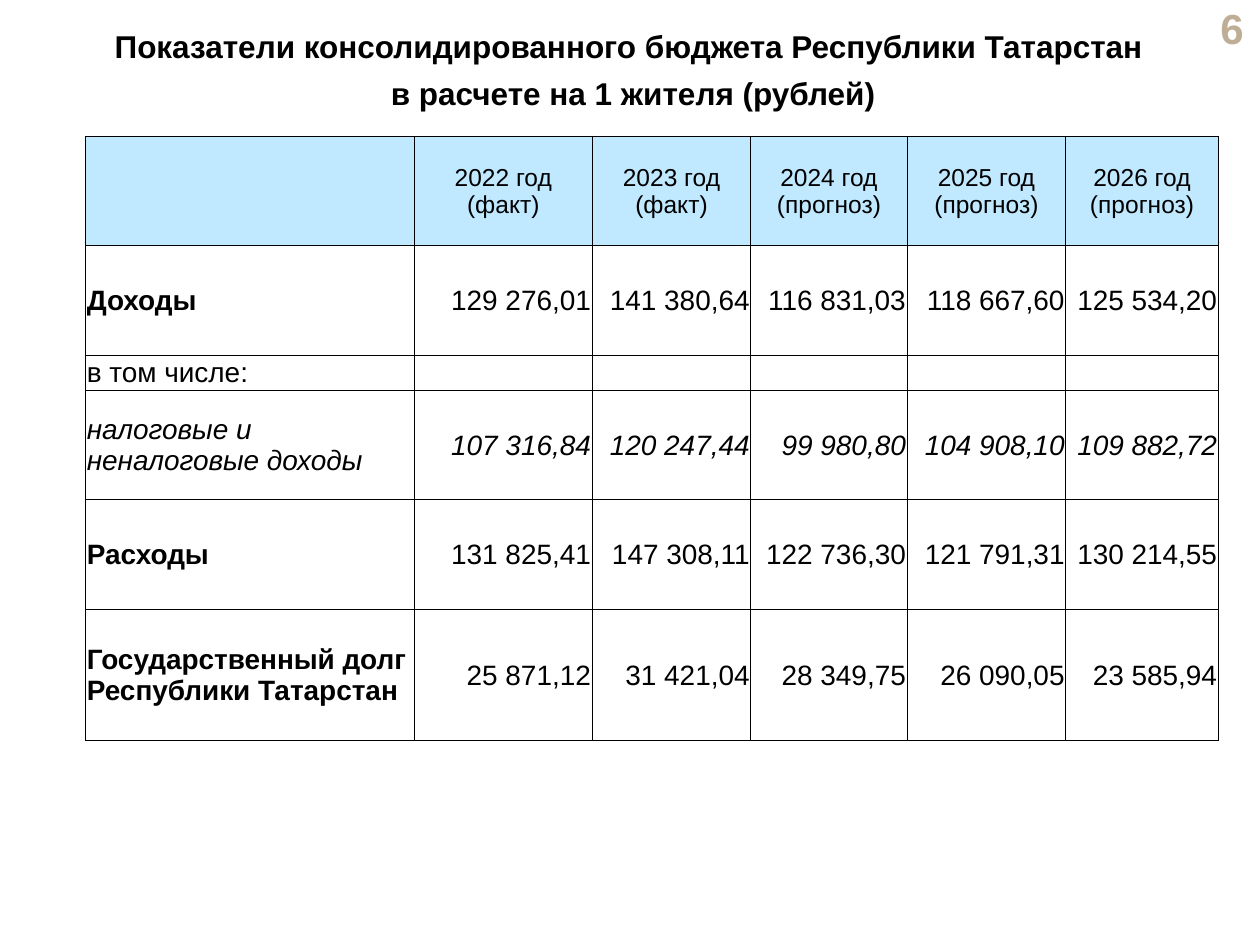
from lxml import etree
from pptx import Presentation
from pptx.dml.color import RGBColor
from pptx.enum import text
from pptx.oxml.ns import qn
from pptx.util import Inches, Pt

COLORS = {"text": "000000", "border": "000000", "header": "C0E9FF",
          "body": "FFFFFF", "page": "BFAE96"}
TITLE = ["Показатели консолидированного бюджета Республики Татарстан ",
         "в расчете на 1 жителя (рублей)"]
HEADER = ["", "2022 год\v(факт)", "2023 год (факт)", "2024 год\v(прогноз)",
          "2025 год\v(прогноз)", "2026 год\v(прогноз)"]
BUDGET = [
    ["Доходы", "129 276,01", "141 380,64", "116 831,03", "118 667,60", "125 534,20"],
    ["в том числе:", "", "", "", "", ""],
    ["налоговые и неналоговые доходы", "107 316,84", "120 247,44", "99 980,80",
     "104 908,10", "109 882,72"],
    ["Расходы", "131 825,41", "147 308,11", "122 736,30", "121 791,31", "130 214,55"],
    ["Государственный долг Республики Татарстан", "25 871,12", "31 421,04",
     "28 349,75", "26 090,05", "23 585,94"],
]
BOLD_ROWS = {1, 4, 5}
ITALIC_ROW = 3
COLUMN_WIDTHS = [2.61, 1.41, 1.26, 1.24, 1.26, 1.21]
ROW_HEIGHTS = [0.87, 0.87, 0.26, 0.87, 0.87, 1.04]


def style_paragraph(paragraph, size, align, color="text", bold=False, italic=False):
    paragraph.alignment = align
    font = paragraph.font
    font.name, font.size, font.bold, font.italic = "Arial", Pt(size), bold, italic
    font.color.rgb = RGBColor.from_string(COLORS[color])


def add_title(slide):
    title = slide.shapes.title
    title.left, title.top = Inches(0.6), Inches(0.2)
    title.width, title.height = Inches(8.85), Inches(0.67)
    frame = title.text_frame
    frame.text = "\n".join(TITLE)
    frame.word_wrap = True
    frame.auto_size = text.MSO_AUTO_SIZE.NONE
    frame.vertical_anchor = text.MSO_ANCHOR.TOP
    for index, line in enumerate(frame.paragraphs):
        line.line_spacing = 0.9
        line.space_before = Pt(7.5 if index else 0)
        style_paragraph(line, 18, text.PP_ALIGN.CENTER, bold=True)


def add_page_number(slide, number):
    box = slide.shapes.add_textbox(Inches(9.11), Inches(0.05), Inches(0.86), Inches(0.34))
    frame = box.text_frame
    frame.text = number
    frame.word_wrap = True
    frame.vertical_anchor = text.MSO_ANCHOR.MIDDLE
    style_paragraph(frame.paragraphs[0], 24, text.PP_ALIGN.RIGHT, "page", bold=True)


def add_borders(cell):
    properties = cell._tc.get_or_add_tcPr()
    for side in ("a:lnL", "a:lnR", "a:lnT", "a:lnB"):
        line = etree.SubElement(properties, qn(side), w=str(Pt(0.5)))
        fill = etree.SubElement(line, qn("a:solidFill"))
        etree.SubElement(fill, qn("a:srgbClr"), val=COLORS["border"])


def fill_cell(cell, content, row, column):
    header = row == 0
    size = 14 if header else 16
    add_borders(cell)
    cell.fill.solid()
    cell.fill.fore_color.rgb = RGBColor.from_string(COLORS["header" if header else "body"])
    cell.margin_left = cell.margin_right = Inches(0.08 if header else 0.01)
    cell.margin_top, cell.margin_bottom = Inches(0.01), 0
    cell.vertical_anchor = text.MSO_ANCHOR.MIDDLE
    cell.text_frame.text = content
    paragraph = cell.text_frame.paragraphs[0]
    if header:
        align = text.PP_ALIGN.CENTER
    else:
        align = text.PP_ALIGN.RIGHT if column else text.PP_ALIGN.LEFT
    style_paragraph(paragraph, size, align,
                    bold=column == 0 and row in BOLD_ROWS, italic=row == ITALIC_ROW)
    if not content:  # an empty cell takes its line height from the end mark
        etree.SubElement(paragraph._p, qn("a:endParaRPr"), sz=str(size * 100))


def add_budget_table(slide):
    rows = [HEADER] + BUDGET
    table = slide.shapes.add_table(
        len(rows), len(HEADER), Inches(0.68), Inches(1.08),
        Inches(sum(COLUMN_WIDTHS)), Inches(sum(ROW_HEIGHTS))).table
    table.first_row = table.horz_banding = False
    for column, width in zip(table.columns, COLUMN_WIDTHS):
        column.width = Inches(width)
    for row, height in zip(table.rows, ROW_HEIGHTS):
        row.height = Inches(height)
    for row, contents in enumerate(rows):
        for column, content in enumerate(contents):
            fill_cell(table.cell(row, column), content, row, column)


def main():
    deck = Presentation()
    deck.slide_width, deck.slide_height = Inches(10), Inches(7.5)
    slide = deck.slides.add_slide(deck.slide_layouts[5])
    add_page_number(slide, "6")
    add_title(slide)
    add_budget_table(slide)
    deck.save("out.pptx")


if __name__ == "__main__":
    main()
